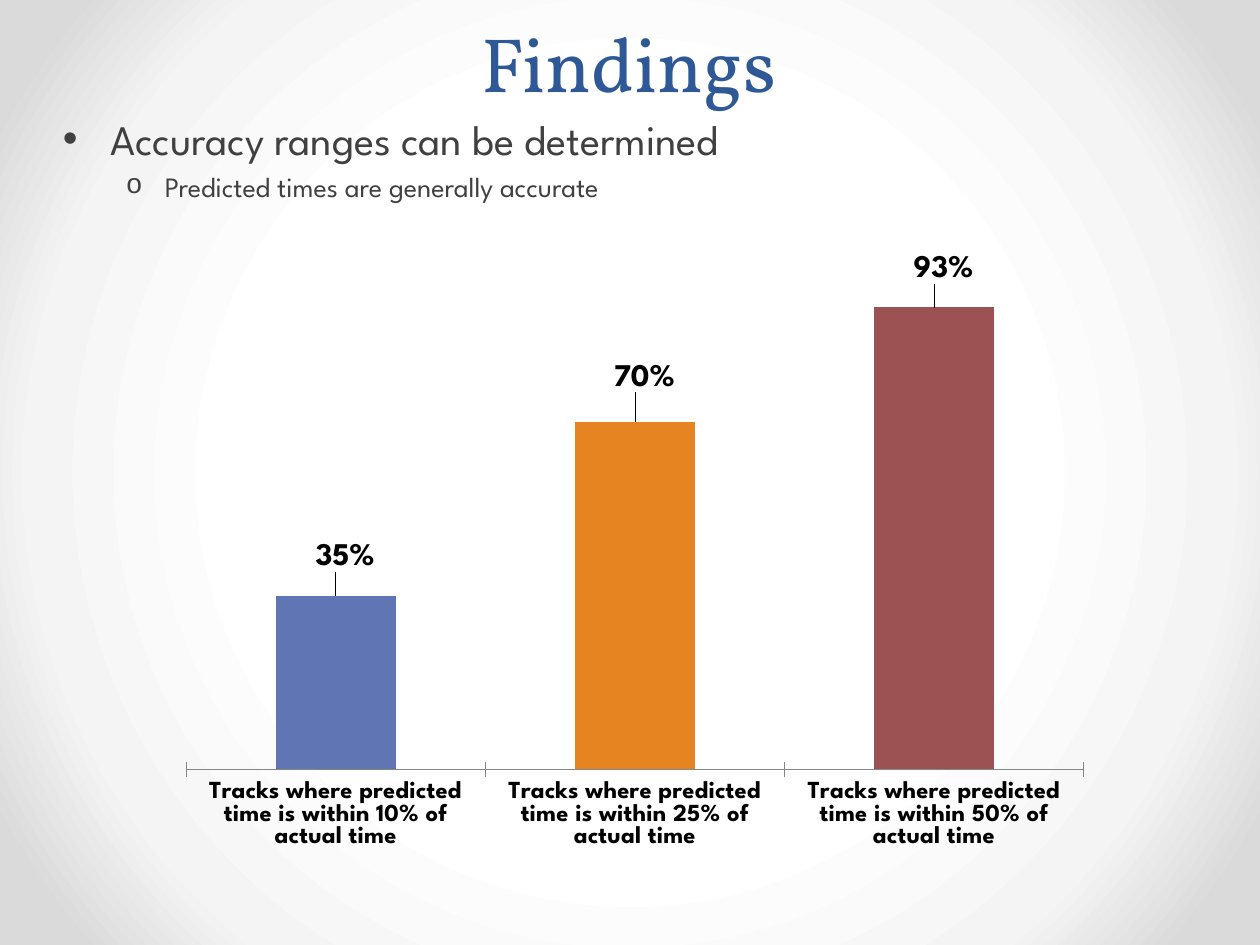
from lxml import etree
from pptx import Presentation
from pptx.chart.data import CategoryChartData
from pptx.dml.color import RGBColor
from pptx.enum.chart import XL_CHART_TYPE as ChartType, XL_LABEL_POSITION as LabelPosition
from pptx.enum.chart import XL_TICK_LABEL_POSITION as TickLabels, XL_TICK_MARK as TickMark
from pptx.enum.text import MSO_ANCHOR as Anchor, PP_ALIGN as Align
from pptx.oxml import parse_xml
from pptx.oxml.ns import nsdecls, qn
from pptx.util import Inches, Pt


def color(value):
    return RGBColor.from_string(value)


class FindingsSlide:
    """Style of the findings slide and the methods that draw its parts."""

    heading_font, body_font = "Vollkorn", "League Spartan"
    heading_color, body_color, chart_color = "2F5897", "404040", "000000"

    def __init__(self, deck):
        self.slide = deck.slides.add_slide(deck.slide_layouts[6])

    def style(self, font, name, size, value, bold=False):
        font.name, font.size, font.bold = name, Pt(size), bold
        font.color.rgb = color(value)

    def background(self, stops):
        gradient = "".join(
            f'<a:gs pos="{position * 1000}"><a:srgbClr val="{value}"/></a:gs>'
            for position, value in stops)
        self.slide.background.fill.solid()
        properties = self.slide.element.find(".//" + qn("p:bgPr"))
        properties.replace(properties[0], parse_xml(
            f'<a:gradFill {nsdecls("a")} rotWithShape="1"><a:gsLst>{gradient}</a:gsLst>'
            '<a:path path="circle"><a:fillToRect l="50000" t="50000" r="50000" b="50000"/>'
            '</a:path></a:gradFill>'))

    def text_frame(self, *box):
        frame = self.slide.shapes.add_textbox(*map(Inches, box)).text_frame
        frame.word_wrap, frame.vertical_anchor = True, Anchor.TOP
        return frame

    def title(self, text, *box):
        frame = self.text_frame(*box)
        frame.text = text
        heading = frame.paragraphs[0]
        heading.alignment, heading.line_spacing = Align.CENTER, Pt(58)
        self.style(heading.runs[0].font, self.heading_font, 44, self.heading_color)

    def bullets(self, items, *box):
        frame = self.text_frame(*box)
        frame.text = "\n".join(item[0] for item in items)
        for level, (point, item) in enumerate(zip(frame.paragraphs, items)):
            _, size, mark, mark_font, margin, hanging = item
            point.level = level
            self.style(point.runs[0].font, self.body_font, size, self.body_color)
            properties = point._p.get_or_add_pPr()
            properties.set("marL", str(Inches(margin)))
            properties.set("indent", str(-Inches(hanging)))
            before = etree.SubElement(properties, qn("a:spcBef"))
            etree.SubElement(before, qn("a:spcPct"), val="20000")
            etree.SubElement(properties, qn("a:buFont"), typeface=mark_font)
            etree.SubElement(properties, qn("a:buChar"), char=mark)

    def manual_layout(self, **settings):
        entries = "".join(f'<c:{key} val="{value}"/>' for key, value in settings.items())
        return parse_xml(f'<c:layout {nsdecls("c")}><c:manualLayout>{entries}'
                         '</c:manualLayout></c:layout>')

    def column_chart(self, bars, plot_layout, *box):
        data = CategoryChartData(number_format="0%")
        data.categories = [bar[0] for bar in bars]
        data.add_series("Series 1", [bar[1] for bar in bars])
        chart = self.slide.shapes.add_chart(
            ChartType.COLUMN_CLUSTERED, *map(Inches, box), data).chart
        chart.has_legend = chart.has_title = False
        self.style(chart.font, self.heading_font, 10, self.chart_color)

        ranges, accuracy = chart.category_axis, chart.value_axis
        ranges.major_tick_mark = TickMark.CROSS
        ranges.tick_label_position = TickLabels.LOW
        ranges.format.line.color.rgb = color("868686")
        self.style(ranges.tick_labels.font, self.body_font, 14, self.chart_color, True)
        accuracy.minimum_scale, accuracy.maximum_scale = 0, 1
        accuracy.has_major_gridlines = accuracy.visible = False
        accuracy.tick_labels.number_format = "0%"
        accuracy.tick_labels.number_format_is_linked = False

        plot = chart.plots[0]
        plot.gap_width, plot.vary_by_categories = 150, False
        series = plot.series[0]
        labels = series.data_labels
        labels.show_value, labels.position = True, LabelPosition.OUTSIDE_END
        labels.number_format, labels.number_format_is_linked = "0%", False
        self.style(labels.font, self.body_font, 18, self.chart_color, True)
        for index, (_, _, fill, _) in enumerate(bars):
            point = series.points[index]
            point.format.fill.solid()
            point.format.fill.fore_color.rgb = color(fill)
            self.style(point.data_label.font, self.body_font, 18, self.chart_color, True)
            point.data_label.position = LabelPosition.OUTSIDE_END

        space = chart._chartSpace
        for label, bar in zip(space.iter(qn("c:dLbl")), bars):
            shift_x, shift_y = bar[3]
            label.insert(1, self.manual_layout(x=shift_x, y=shift_y))
        area = space.find(".//" + qn("c:plotArea"))
        for automatic in area.findall(qn("c:layout")):
            area.remove(automatic)
        area.insert(0, self.manual_layout(**plot_layout))


def main():
    deck = Presentation()
    deck.slide_width, deck.slide_height = Inches(10), Inches(7.5)
    findings = FindingsSlide(deck)
    findings.background([(50, "FFFFFF"), (76, "F4F4F4"), (92, "DADADA")])
    findings.bullets([
        ("Accuracy ranges can be determined", 24, "•", "Arial", 0.38, 0.38),
        ("Predicted times are generally accurate", 16, "o", "Courier New", 0.81, 0.31),
    ], 0.4, 0.85, 9, 1.17)
    findings.title("Findings", 0.49, 0, 9, 1.75)
    bars = [
        (f"Tracks where predicted time is within {limit}% of actual time", share, fill, shift)
        for limit, share, fill, shift in [
            (10, 0.35, "6076B4", (0.01, -0.03)),
            (25, 0.7, "E68422", (0.01, -0.04)),
            (50, 0.93, "9C5252", (0.01, -0.03)),
        ]
    ]
    plot_layout = dict(layoutTarget="inner", xMode="edge", yMode="edge",
                       x=0.02, y=0.03, w=0.96, h=0.82)
    findings.column_chart(bars, plot_layout, 1.33, 2.02, 7.42, 4.81)
    deck.save("out.pptx")


if __name__ == "__main__":
    main()
